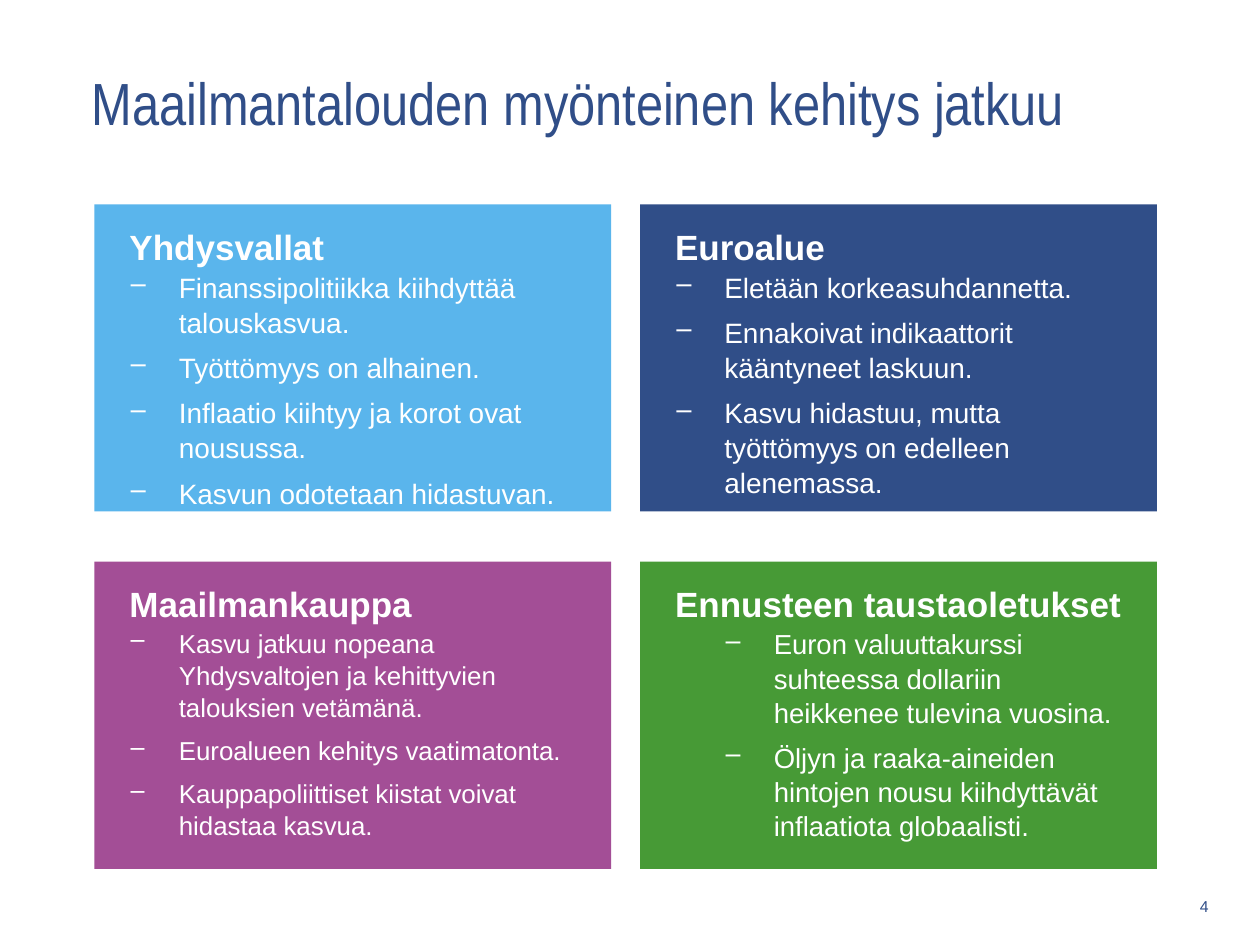
import pptx
import pptx.util
import pptx.dml.color
import pptx.enum.shapes
import pptx.enum.text
from lxml import etree

Pt = pptx.util.Pt
RGB = pptx.dml.color.RGBColor
ALIGN = pptx.enum.text.PP_ALIGN
ANCHOR = pptx.enum.text.MSO_ANCHOR

NAVY = RGB(0x30, 0x4E, 0x88)
SKY = RGB(0x5A, 0xB5, 0xEC)
PURPLE = RGB(0xA3, 0x4E, 0x96)
GREEN = RGB(0x47, 0x9A, 0x36)
WHITE = RGB(0xFF, 0xFF, 0xFF)

LEFT, TOP = 54, 116.8
CARD_W, CARD_H = 295.3, 175.5
STEP_X, STEP_Y = 311.75, 204.2
HANG = 28.2

# heading, fill, text size, bullet level, bullets
CARDS = [
    ("Yhdysvallat", SKY, 16, 0, [
        "Finanssipolitiikka kiihdyttää talouskasvua.",
        "Työttömyys on alhainen.",
        "Inflaatio kiihtyy ja korot ovat nousussa.",
        "Kasvun odotetaan hidastuvan."]),
    ("Euroalue", NAVY, 16, 0, [
        "Eletään korkeasuhdannetta.",
        "Ennakoivat indikaattorit kääntyneet laskuun.",
        "Kasvu hidastuu, mutta työttömyys on edelleen alenemassa."]),
    ("Maailmankauppa", PURPLE, 14.8, 0, [
        "Kasvu jatkuu nopeana Yhdysvaltojen ja kehittyvien talouksien vetämänä.",
        "Euroalueen kehitys vaatimatonta.",
        "Kauppapoliittiset kiistat voivat hidastaa kasvua."]),
    ("Ennusteen taustaoletukset", GREEN, 15.7, 1, [
        "Euron valuuttakurssi suhteessa dollariin heikkenee tulevina vuosina.",
        "Öljyn ja raaka-aineiden hintojen nousu kiihdyttävät inflaatiota globaalisti."]),
]


def write(p, text, size, color, font="Arial", bold=False, align=ALIGN.LEFT,
          after=0, spacing=None, level=None):
    """Fill a paragraph; a level makes it a dash bullet with a hanging indent."""
    p.alignment = align
    p.space_after = Pt(after)
    if spacing:
        p.line_spacing = spacing
    if level is not None:
        p.level = level
        pPr = p._p.get_or_add_pPr()
        pPr.set("marL", str(Pt(HANG * (level + 1))))
        pPr.set("indent", str(-Pt(HANG)))
        etree.SubElement(pPr, pptx.oxml.ns.qn("a:buChar"), char="‒")
    r = p.add_run()
    r.text = text
    r.font.name, r.font.size, r.font.bold = font, Pt(size), bold
    r.font.color.rgb = color


class Deck:
    def __init__(self):
        self.prs = pptx.Presentation()
        self.prs.slide_width, self.prs.slide_height = Pt(720), Pt(540)
        self.s = self.prs.slides.add_slide(self.prs.slide_layouts[6])

    def frame(self, sp, insets, anchor):
        tf = sp.text_frame
        tf.word_wrap = True
        tf.vertical_anchor = anchor
        (tf.margin_left, tf.margin_top,
         tf.margin_right, tf.margin_bottom) = map(Pt, insets)
        return tf

    def text(self, x, y, w, h, text, insets=(7.2, 3.6, 7.2, 3.6),
             anchor=ANCHOR.MIDDLE, **style):
        sp = self.s.shapes.add_textbox(Pt(x), Pt(y), Pt(w), Pt(h))
        write(self.frame(sp, insets, anchor).paragraphs[0], text, **style)

    def panel(self, x, y, fill, size, level, bullets):
        sp = self.s.shapes.add_shape(pptx.enum.shapes.MSO_SHAPE.RECTANGLE,
                                     Pt(x), Pt(y), Pt(CARD_W), Pt(CARD_H))
        sp.shadow.inherit = False
        sp.fill.solid()
        sp.fill.fore_color.rgb = fill
        sp.line.fill.background()
        tf = self.frame(sp, (20, 36.8, 14.4, 14.4), ANCHOR.TOP)
        for i, bullet in enumerate(bullets):
            p = tf.add_paragraph() if i else tf.paragraphs[0]
            write(p, bullet, size, WHITE, after=6, spacing=1.04, level=level)

    def heading(self, x, y, text):
        self.text(x, y, CARD_W, 39.6, text, insets=(20, 11.5, 14.4, 14.4),
                  anchor=ANCHOR.TOP, size=20, color=WHITE, bold=True, after=8,
                  spacing=1.04)


def main():
    deck = Deck()
    deck.text(45.4, 11.5, 615, 93.6, "Maailmantalouden myönteinen kehitys jatkuu",
              size=34, color=NAVY, font="Arial Narrow")
    deck.text(660.2, 506.2, 37.5, 23, "4", size=9, color=NAVY, align=ALIGN.RIGHT)
    for i, (title, *body) in enumerate(CARDS):
        row, col = divmod(i, 2)
        x, y = LEFT + col * STEP_X, TOP + row * STEP_Y
        deck.panel(x, y, *body)
        deck.heading(x, y, title)
    deck.prs.save("out.pptx")


if __name__ == "__main__":
    main()
